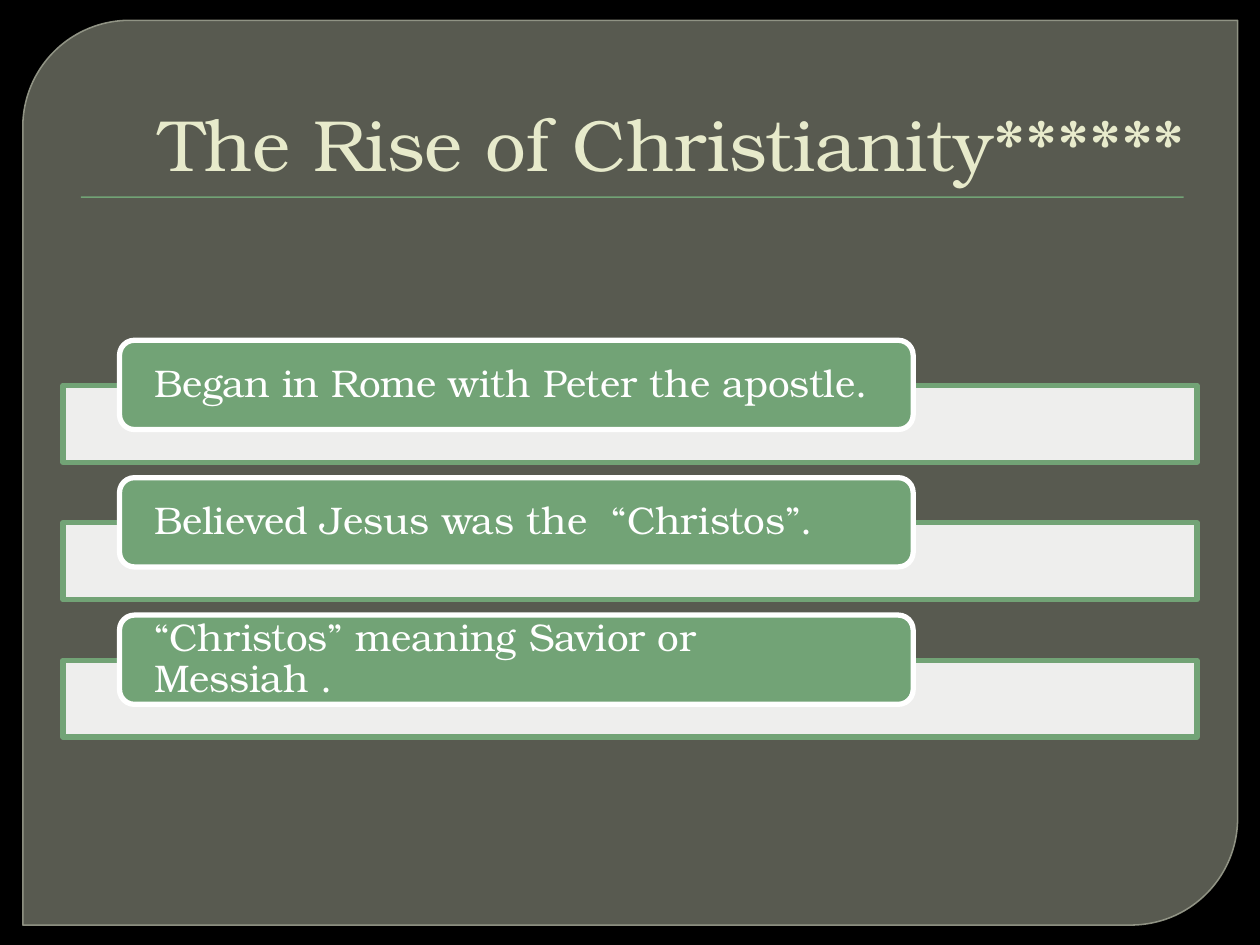
from lxml.etree import SubElement
from pptx import Presentation
from pptx.dml.color import RGBColor
from pptx.enum.shapes import MSO_SHAPE as Shape
from pptx.enum.text import MSO_ANCHOR as Anchor, PP_ALIGN as Align
from pptx.oxml.ns import qn
from pptx.util import Cm, Pt

BLACK = RGBColor(0x00, 0x00, 0x00)
WHITE = RGBColor(0xFF, 0xFF, 0xFF)
PANEL = RGBColor(0x88, 0x8B, 0x7B)
PANEL_EDGE = RGBColor(0x9D, 0xA0, 0x90)
GREEN = RGBColor(0x72, 0xA3, 0x76)
CREAM = RGBColor(0xE7, 0xEA, 0xCB)

STATEMENTS = [
    "Began in Rome with Peter the apostle.",
    "Believed Jesus was the  “Christos”.",
    "“Christos” meaning Savior or Messiah .",
]


def set_opacity(properties, percent):
    """Make the solid fill of a shape or line partly transparent."""
    color = properties.find(qn("a:solidFill"))[0]
    SubElement(color, qn("a:alpha"), val=str(percent * 1000))


class SlideBuilder:
    font = "TeX Gyre Bonum"

    def __init__(self, slide):
        self.slide = slide

    def background(self, color):
        fill = self.slide.background.fill
        fill.solid()
        fill.fore_color.rgb = color

    def shape(self, kind, box, color, opacity=100, line=None, line_width=3, line_opacity=100):
        shape = self.slide.shapes.add_shape(kind, *map(Cm, box))
        shape.shadow.inherit = False
        shape.fill.solid()
        shape.fill.fore_color.rgb = color
        properties = shape.element.spPr
        if opacity < 100:
            set_opacity(properties, opacity)
        if line is None:
            shape.line.fill.background()
        else:
            shape.line.width = Pt(line_width)
            shape.line.color.rgb = line
            if line_opacity < 100:
                set_opacity(properties.find(qn("a:ln")), line_opacity)
        return shape

    def add_text(self, shape, text, size, color, align, anchor, side_inset, end_inset):
        frame = shape.text_frame
        frame.word_wrap = True
        frame.vertical_anchor = anchor
        frame.margin_left = frame.margin_right = Cm(side_inset)
        frame.margin_top = frame.margin_bottom = Cm(end_inset)
        paragraph = frame.paragraphs[0]
        paragraph.alignment = align
        run = paragraph.add_run()
        run.text = text
        run.font.name = self.font
        run.font.size = Pt(size)
        run.font.color.rgb = color
        return paragraph

    def title(self, text, box):
        shape = self.slide.shapes.add_textbox(*map(Cm, box))
        self.add_text(shape, text, 41.4, CREAM, Align.RIGHT, Anchor.BOTTOM, 0.25, 0.13)

    def statement(self, text, top):
        """A pale bar with a green label overlapping its upper edge."""
        self.shape(Shape.RECTANGLE, (1.27, top + 0.91, 22.86, 1.55), WHITE, 90, GREEN)
        label = self.shape(Shape.ROUNDED_RECTANGLE, (2.41, top, 16, 1.8), GREEN, line=WHITE)
        paragraph = self.add_text(label, text, 22, WHITE, Align.LEFT, Anchor.MIDDLE, 0.61, 0)
        paragraph.line_spacing = 0.9


def main():
    presentation = Presentation()
    presentation.slide_width = Cm(25.4)
    presentation.slide_height = Cm(19.05)
    builder = SlideBuilder(presentation.slides.add_slide(presentation.slide_layouts[6]))

    # Backdrop
    builder.background(BLACK)
    panel = builder.shape(Shape.ROUND_2_DIAG_RECTANGLE, (0.46, 0.41, 24.49, 18.24),
                          PANEL, 65, PANEL_EDGE, 0.87, 88)
    panel.adjustments[0] = 0.118
    panel.adjustments[1] = 0

    # Title and rule
    builder.shape(Shape.RECTANGLE, (1.63, 3.96, 22.23, 0.03), GREEN)
    builder.title("The Rise of Christianity******", (1.27, 0.71, 22.86, 3.18))

    # Statements
    for index, text in enumerate(STATEMENTS):
        builder.statement(text, 6.86 + index * 2.77)

    presentation.save("out.pptx")


if __name__ == "__main__":
    main()
